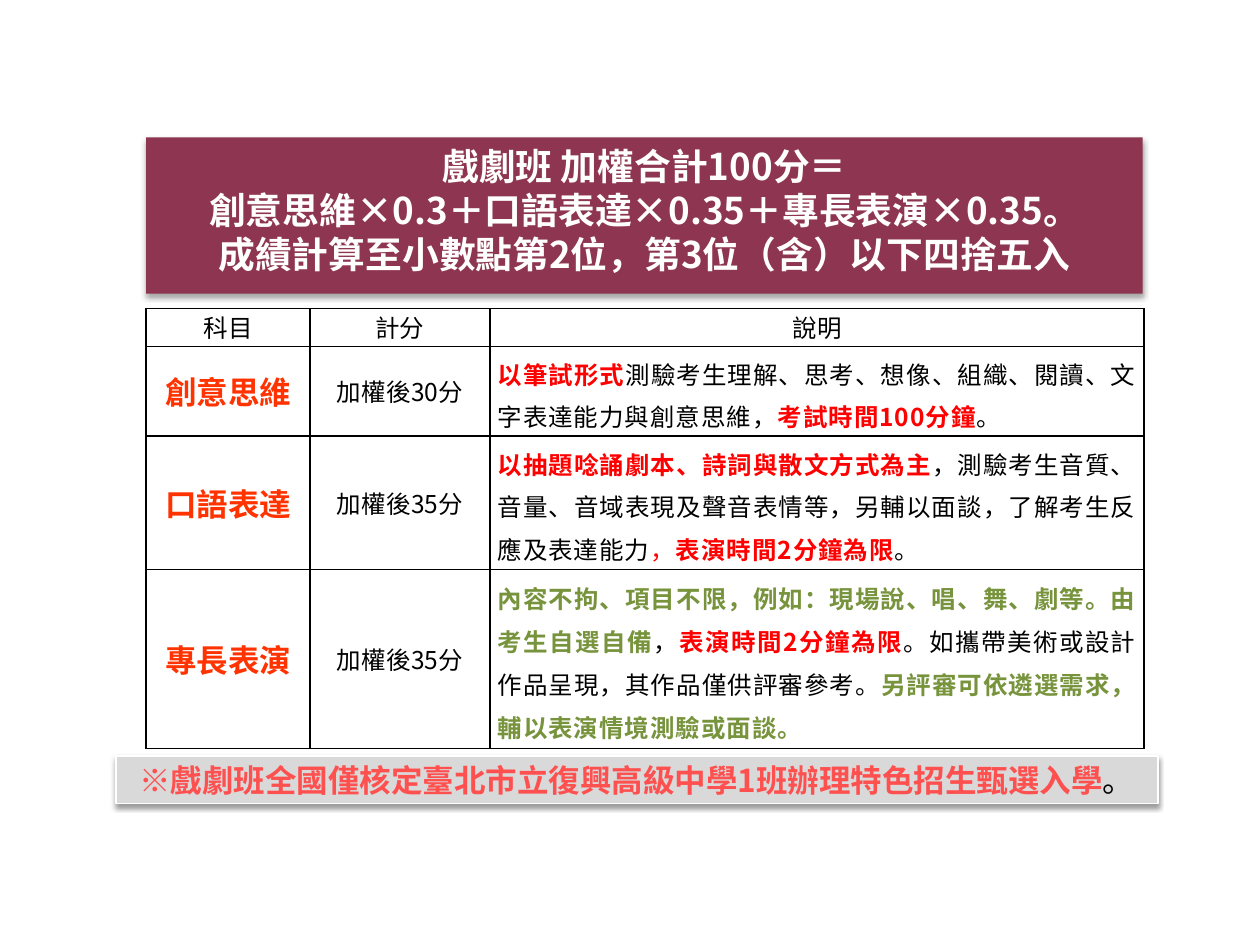
"""Build the slide on how the drama class admission score is weighted."""
from dataclasses import dataclass
from typing import Optional

import pptx
import pptx.chart.data
import pptx.dml.color
import pptx.enum.shapes
import pptx.enum.text
import pptx.oxml
import pptx.oxml.ns
import pptx.util
from lxml import etree

Inches = pptx.util.Inches
ALIGN = pptx.enum.text.PP_ALIGN
ANCHOR = pptx.enum.text.MSO_ANCHOR
FONT = "Noto Sans CJK SC"
COLORS = {
    "black": "000000",
    "white": "FFFFFF",
    "wine": "8E3651",
    "gray": "D9D9D9",
    "orange": "FF3300",
    "red": "FF0000",
    "green": "77933C",
    "coral": "FF5050",
}


@dataclass(frozen=True)
class Run:
    text: str
    color: str = "black"
    bold: bool = False
    size: float = 14
    spacing: float = 0
    font: str = FONT


@dataclass(frozen=True)
class Subject:
    name: str
    points: int
    description: list[Run]


@dataclass(frozen=True)
class Banner:
    left: float
    top: float
    width: float
    height: float
    fill: str
    line: Optional[str]
    shadow_alpha: int
    shadow_distance: float
    margins: tuple[float, float]
    anchor: ANCHOR
    paragraphs: list[list[Run]]


def plain(text: str) -> Run:
    return Run(text, spacing=0.5)


def strong(text: str, color: str = "red") -> Run:
    return Run(text, color, True, spacing=0.5)


SUBJECTS = [
    Subject("創意思維", 30, [
        strong("以筆試形式"),
        plain("測驗考生理解、思考、想像、組織、閱讀、文字表達能力與創意思維，"),
        strong("考試時間100分鐘"),
        plain("。"),
    ]),
    Subject("口語表達", 35, [
        strong("以抽題唸誦劇本、詩詞與散文方式為主"),
        plain("，測驗考生音質、音量、音域表現及聲音表情等，另輔以面談，了解考生反應及表達能力"),
        Run("，", "red", spacing=0.5),
        strong("表演時間2分鐘為限"),
        plain("。"),
    ]),
    Subject("專長表演", 35, [
        strong("內容不拘、項目不限，例如：現場說、唱、舞、劇等。由考生自選自備", "green"),
        plain("，"),
        strong("表演時間2分鐘為限"),
        plain("。如攜帶美術或設計作品呈現，其作品僅供評審參考。"),
        strong("另評審可依遴選需求，輔以表演情境測驗或面談。", "green"),
    ]),
]
HEADINGS = ["科目", "計分", "說明"]
COLUMN_WIDTHS = [1.3, 1.43, 5.19]
ROW_HEIGHTS = [0.3, 0.71, 1.06, 1.42]
FORMULA_LINES = [
    "戲劇班 加權合計100分＝",
    "創意思維×0.3＋口語表達×0.35＋專長表演×0.35。",
    "成績計算至小數點第2位，第3位（含）以下四捨五入",
]
BANNERS = [
    Banner(1.16, 1.09, 7.91, 1.24, "wine", None, 35, 1.8, (0.1, 0.05), ANCHOR.TOP,
           [[Run(line, "white", True, 21)] for line in FORMULA_LINES]),
    Banner(0.92, 6, 8.27, 0.38, "gray", "white", 38, 1.6, (0.07, 0.04), ANCHOR.MIDDLE,
           [[Run("※戲劇班全國僅核定臺北市立復興高級中學1班辦理特色招生甄選入學", "coral", True, 18),
             Run("。", size=18, font="Calibri")]]),
]


def rgb(name: str) -> pptx.dml.color.RGBColor:
    return pptx.dml.color.RGBColor.from_string(COLORS[name])


def add_child(parent: etree._Element, tag: str, **attributes: object) -> etree._Element:
    values = {key: str(value) for key, value in attributes.items()}
    return etree.SubElement(parent, pptx.oxml.ns.qn(tag), values)


def write_runs(paragraph, runs: list[Run], align: ALIGN = ALIGN.CENTER) -> None:
    paragraph.alignment = align
    for item in runs:
        run = paragraph.add_run()
        run.text = item.text
        run.font.size = pptx.util.Pt(item.size)
        run.font.bold = item.bold
        run.font.color.rgb = rgb(item.color)
        run.font.name = item.font
        properties = run.font._element
        add_child(properties, "a:ea", typeface=item.font)
        if item.spacing:
            properties.set("spc", str(round(item.spacing * 100)))


def format_cell(cell, anchor: ANCHOR) -> None:
    cell.margin_left = cell.margin_right = Inches(0.06)
    cell.margin_top = cell.margin_bottom = 0
    cell.vertical_anchor = anchor
    properties = cell._tc.get_or_add_tcPr()
    for side in ("a:lnL", "a:lnR", "a:lnT", "a:lnB"):
        border = add_child(properties, side, w=pptx.util.Pt(1))
        add_child(add_child(border, "a:solidFill"), "a:srgbClr", val=COLORS["black"])
    cell.fill.background()


def add_subject_table(slide) -> None:
    table = slide.shapes.add_table(
        len(ROW_HEIGHTS), len(COLUMN_WIDTHS), Inches(1.16), Inches(2.45),
        Inches(sum(COLUMN_WIDTHS)), Inches(sum(ROW_HEIGHTS))).table
    table.first_row = table.horz_banding = False
    for column, width in zip(table.columns, COLUMN_WIDTHS):
        column.width = Inches(width)
    for row, height in zip(table.rows, ROW_HEIGHTS):
        row.height = Inches(height)
    rows = [[[Run(heading)] for heading in HEADINGS]]
    for subject in SUBJECTS:
        score = Run(f"加權後{subject.points}分", spacing=0.1)
        rows.append([[Run(subject.name, "orange", True, 18)], [score], subject.description])
    for row_index, row in enumerate(rows):
        for column_index, runs in enumerate(row):
            cell = table.cell(row_index, column_index)
            format_cell(cell, ANCHOR.MIDDLE if row_index else ANCHOR.TOP)
            paragraph = cell.text_frame.paragraphs[0]
            is_description = row_index > 0 and column_index == 2
            if is_description:
                paragraph.line_spacing = 1.2
            write_runs(paragraph, runs, ALIGN.JUSTIFY if is_description else ALIGN.CENTER)


def add_banner(slide, banner: Banner) -> None:
    shape = slide.shapes.add_shape(
        pptx.enum.shapes.MSO_SHAPE.RECTANGLE, Inches(banner.left), Inches(banner.top),
        Inches(banner.width), Inches(banner.height))
    shape.fill.solid()
    shape.fill.fore_color.rgb = rgb(banner.fill)
    if banner.line:
        shape.line.color.rgb = rgb(banner.line)
        shape.line.width = pptx.util.Pt(0.75)
    else:
        shape.line.fill.background()
    shape.shadow.inherit = False
    effects = shape._element.spPr.find(pptx.oxml.ns.qn("a:effectLst"))
    shadow = add_child(effects, "a:outerShdw", blurRad=pptx.util.Pt(3.1),
                       dist=pptx.util.Pt(banner.shadow_distance), dir=90 * 60000, rotWithShape=0)
    color = add_child(shadow, "a:srgbClr", val=COLORS["black"])
    add_child(color, "a:alpha", val=banner.shadow_alpha * 1000)
    frame = shape.text_frame
    frame.word_wrap = True
    frame.vertical_anchor = banner.anchor
    frame.margin_left = frame.margin_right = Inches(banner.margins[0])
    frame.margin_top = frame.margin_bottom = Inches(banner.margins[1])
    for index, runs in enumerate(banner.paragraphs):
        write_runs(frame.add_paragraph() if index else frame.paragraphs[0], runs)


def main() -> None:
    presentation = pptx.Presentation()
    presentation.slide_width, presentation.slide_height = Inches(10), Inches(7.5)
    slide = presentation.slides.add_slide(presentation.slide_layouts[6])
    add_subject_table(slide)
    for banner in BANNERS:
        add_banner(slide, banner)
    presentation.save("out.pptx")


if __name__ == "__main__":
    main()
